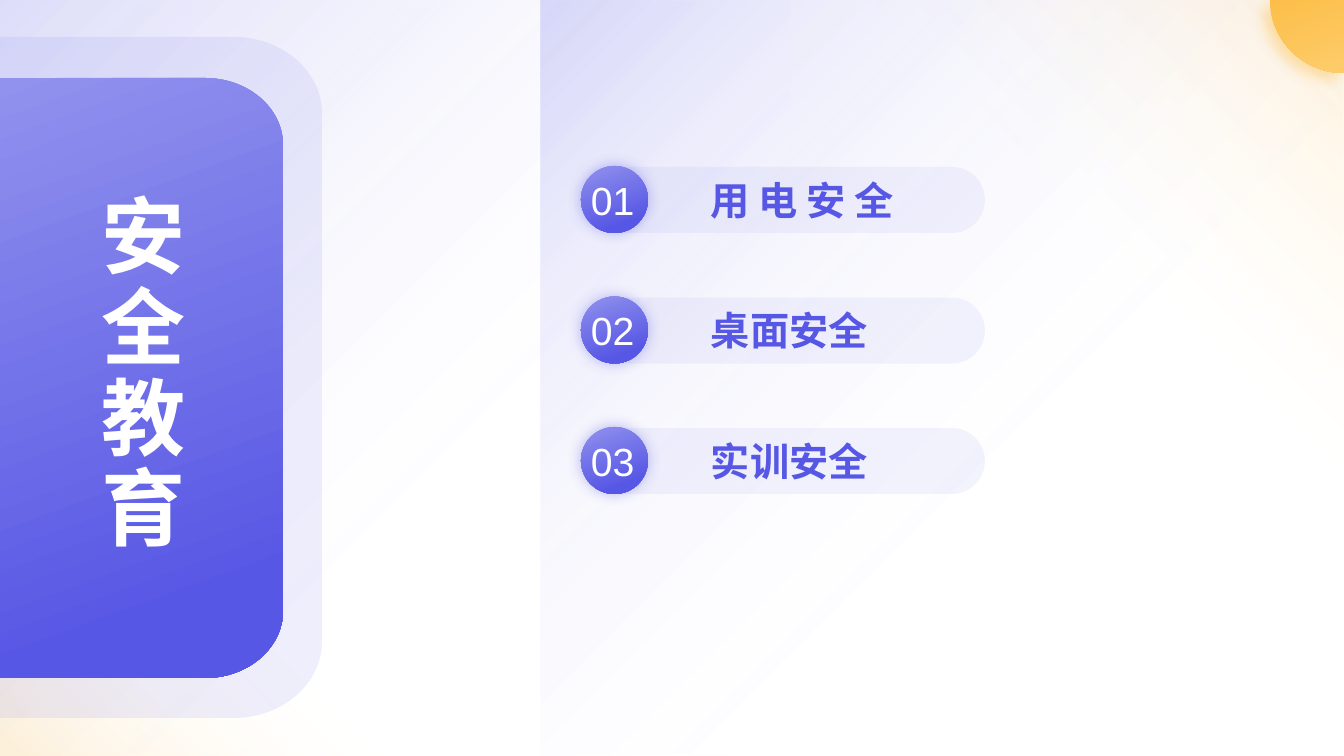
from lxml import etree
from pptx import Presentation
from pptx.dml.color import RGBColor
from pptx.enum.shapes import MSO_SHAPE
from pptx.enum.text import MSO_ANCHOR, MSO_AUTO_SIZE, PP_ALIGN
from pptx.oxml.ns import qn
from pptx.util import Pt

PX = 12192000 / 1344
WIDTH, HEIGHT = 1344, 756
FONT = "Arial"
INDIGO = RGBColor(0x57, 0x57, 0xE5)
LAVENDER = RGBColor(0x91, 0x91, 0xEE)
AMBER = RGBColor(0xFC, 0xBE, 0x49)
LIGHT_AMBER = RGBColor(0xFD, 0xCB, 0x67)
WHITE = RGBColor(0xFF, 0xFF, 0xFF)
RECTANGLE, PILL, OVAL = MSO_SHAPE.RECTANGLE, MSO_SHAPE.ROUNDED_RECTANGLE, MSO_SHAPE.OVAL
ROUND = 0.55

TITLE = "安全教育"
TOPICS = ["用 电 安 全", "桌面安全", "实训安全"]
FIRST_ROW, LAST_ROW = 167, 428

INDIGO_GLOW = [(0, INDIGO, 20), (65, WHITE, 0)]
AMBER_GLOW = [(45, WHITE, 0), (98, AMBER, 20)]
GLOWS = [
    ((0, 0, 790, 756), INDIGO_GLOW, None, False),
    ((877, 0, 467, 488), AMBER_GLOW, 315, False),
    ((-2, 393, 404, 363), AMBER_GLOW, 315, True),
    ((541, 0, 803, 756), INDIGO_GLOW, None, True),
]


def emu(*lengths):
    return [round(length * PX) for length in lengths]


def add_child(parent, tag, **attributes):
    child = etree.SubElement(parent, qn(tag))
    for name, value in attributes.items():
        child.set(name, str(value))
    return child


def add_colour(parent, colour, opacity):
    element = add_child(parent, "a:srgbClr", val=colour)
    add_child(element, "a:alpha", val=opacity * 1000)


def fill_solid(shape, colour, opacity):
    shape.fill.solid()
    shape.fill.fore_color.rgb = colour
    colour_element = shape._element.spPr.find(qn("a:solidFill"))[0]
    add_child(colour_element, "a:alpha", val=opacity * 1000)


def fill_gradient(shape, stops, angle=None):
    shape.fill.background()
    properties = shape._element.spPr
    gradient = etree.Element(qn("a:gradFill"), rotWithShape="1")
    stop_list = add_child(gradient, "a:gsLst")
    for position, colour, opacity in stops:
        add_colour(add_child(stop_list, "a:gs", pos=position * 1000), colour, opacity)
    if angle is None:
        circle = add_child(gradient, "a:path", path="circle")
        add_child(circle, "a:fillToRect", r=100000, b=100000)
    else:
        add_child(gradient, "a:lin", ang=angle * 60000, scaled=0)
    properties.replace(properties.find(qn("a:noFill")), gradient)


def add_shadow(shape, colour, blur, distance, direction):
    effects = shape._element.spPr.find(qn("a:effectLst"))
    shadow = add_child(effects, "a:outerShdw", blurRad=Pt(blur), dist=Pt(distance),
                       dir=direction * 60000, algn="ctr", rotWithShape=0)
    add_colour(shadow, colour, 40)


def add_plain_shape(shapes, kind, box):
    shape = shapes.add_shape(kind, *emu(*box))
    shape.shadow.inherit = False
    shape.line.fill.background()
    return shape


def quarter_curve(start, corner, end):
    handles = [tuple(a + (b - a) * ROUND for a, b in zip(point, corner))
               for point in (start, end)]
    return handles + [end]


def add_outline(shapes, points, curve_starts):
    builder = shapes.build_freeform(*points[0], scale=PX)
    builder.add_line_segments(points[1:], close=True)
    shape = builder.convert_to_shape()
    shape.shadow.inherit = False
    shape.line.fill.background()
    segments = list(shape._element.spPr.iter(qn("a:lnTo")))
    for start in curve_starts:
        first, second, third = segments[start - 1:start + 2]
        curve = etree.Element(qn("a:cubicBezTo"))
        first.addprevious(curve)
        for segment in (first, second, third):
            curve.append(segment[0])
            segment.getparent().remove(segment)
    return shape


def add_panel(shapes, top, right, bottom, radius_x, radius_y):
    bend = right - radius_x
    upper, lower = top + radius_y, bottom - radius_y
    points = [(0, top), (bend, top)]
    points += quarter_curve((bend, top), (right, top), (right, upper))
    points += [(right, lower)]
    points += quarter_curve((right, lower), (right, bottom), (bend, bottom))
    points += [(0, bottom)]
    return add_outline(shapes, points, (2, 6))


def format_text(paragraph, size, colour, bold):
    for run in paragraph.runs:
        run.font.name = FONT
        run.font.size = Pt(size)
        run.font.bold = bold
        run.font.color.rgb = colour


def add_label(shapes, text, box, colour, bold):
    label = shapes.add_textbox(*emu(*box))
    frame = label.text_frame
    frame.text = text
    frame.word_wrap = True
    frame.auto_size = MSO_AUTO_SIZE.SHAPE_TO_FIT_TEXT
    format_text(frame.paragraphs[0], 28, colour, bold)


def add_topic(slide, number, topic, top):
    shapes = slide.shapes.add_group_shape().shapes
    pill = add_plain_shape(shapes, PILL, (596, top, 389, 66))
    pill.adjustments[0] = 0.5
    fill_solid(pill, LAVENDER, 10)
    badge = add_plain_shape(shapes, OVAL, (581, top - 1, 67, 67))
    fill_gradient(badge, [(0, LAVENDER, 100), (81, INDIGO, 100)], 70)
    add_shadow(badge, INDIGO, 10, 0, 0)
    add_label(shapes, topic, (701, top + 4, 233, 57), INDIGO, True)
    add_label(shapes, f"{number:02}", (581, top + 4, 67, 57), WHITE, False)


def add_backdrop(shapes):
    for box, stops, angle, flipped in GLOWS:
        glow = add_plain_shape(shapes, RECTANGLE, box)
        fill_gradient(glow, stops, angle)
        if flipped:
            transform = glow._element.spPr.find(qn("a:xfrm"))
            transform.set("flipH", "1")
            transform.set("flipV", "1")
    fill_solid(add_panel(shapes, 37, 322, 718, 88, 76), LAVENDER, 15)
    panel = add_panel(shapes, 78, 283, 678, 78, 67)
    fill_gradient(panel, [(0, LAVENDER, 100), (85, INDIGO, 100)], 70)
    curve = quarter_curve((WIDTH, 73), (1270, 73), (1270, 0))
    corner = add_outline(shapes, [(WIDTH, 0), (WIDTH, 73)] + curve, (2,))
    fill_gradient(corner, [(0, AMBER, 100), (90, LIGHT_AMBER, 100)], 70)
    add_shadow(corner, AMBER, 9, 7, 135)


def place_title(slide):
    title = slide.shapes.title
    title.left, title.top, title.width, title.height = emu(95, 190, 103, 351)
    slide.shapes._spTree.append(title._element)
    frame = title.text_frame
    frame.text = TITLE
    frame.word_wrap = True
    frame.auto_size = MSO_AUTO_SIZE.NONE
    frame.vertical_anchor = MSO_ANCHOR.TOP
    frame.margin_left, frame.margin_top, frame.margin_right, frame.margin_bottom = emu(4, 5, 10, 5)
    paragraph = frame.paragraphs[0]
    paragraph.alignment = PP_ALIGN.CENTER
    paragraph.line_spacing = 0.9
    format_text(paragraph, 60, WHITE, True)
    add_child(paragraph.runs[0]._r.get_or_add_rPr(), "a:ea", typeface=FONT)


def main():
    presentation = Presentation()
    presentation.slide_width, presentation.slide_height = emu(WIDTH, HEIGHT)
    slide = presentation.slides.add_slide(presentation.slide_layouts[5])
    add_backdrop(slide.shapes)
    place_title(slide)
    row_step = (LAST_ROW - FIRST_ROW) / (len(TOPICS) - 1)
    for index, topic in enumerate(TOPICS):
        add_topic(slide, index + 1, topic, FIRST_ROW + index * row_step)
    presentation.save("out.pptx")


if __name__ == "__main__":
    main()
